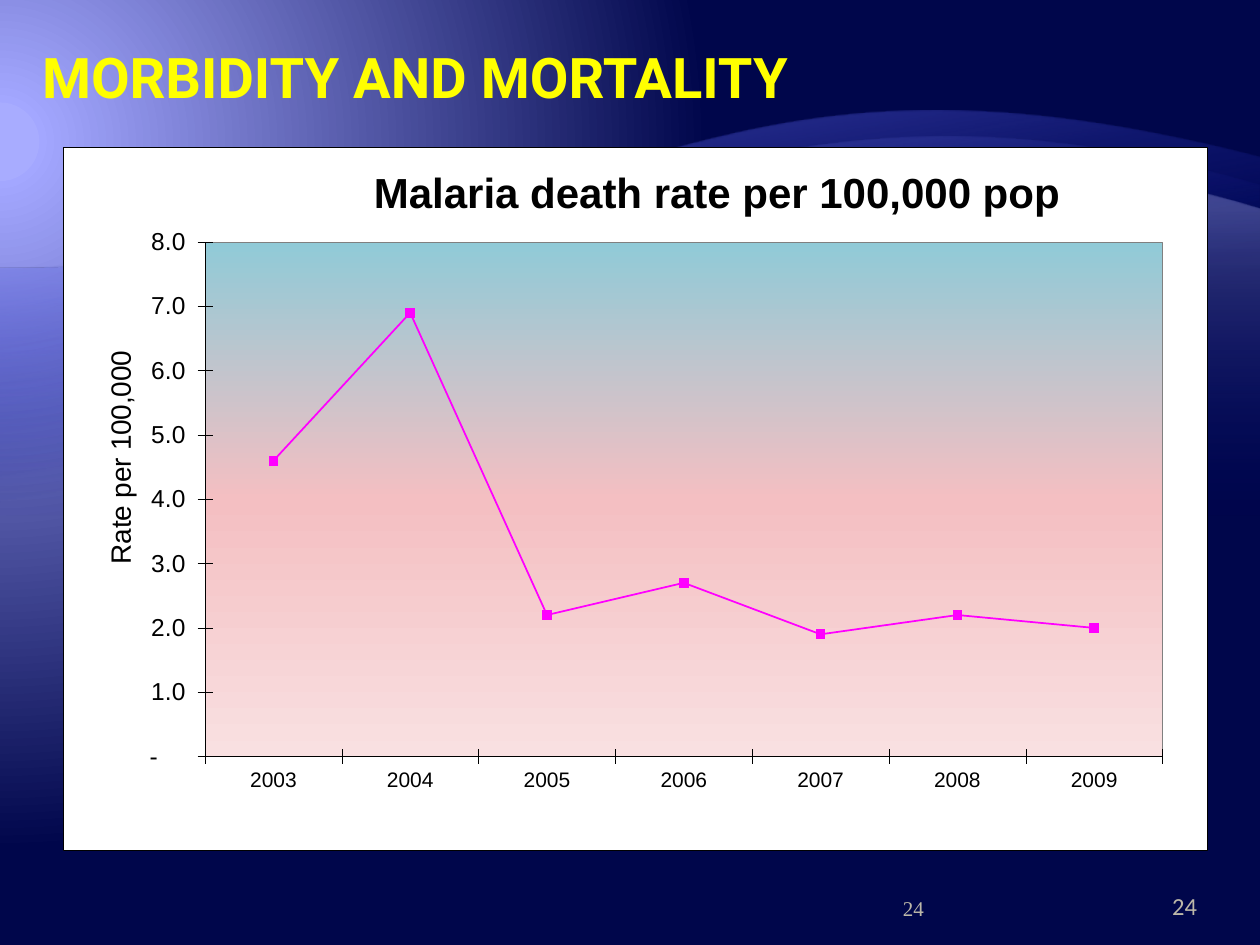
"""Build the malaria mortality slide with its line chart."""
from dataclasses import dataclass
from typing import Optional

from lxml.etree import SubElement
from pptx import Presentation
from pptx.chart.data import CategoryChartData
from pptx.dml.color import RGBColor
from pptx.enum.chart import XL_CHART_TYPE, XL_MARKER_STYLE, XL_TICK_MARK
from pptx.enum.text import MSO_ANCHOR, MSO_AUTO_SIZE, PP_ALIGN
from pptx.oxml import parse_xml
from pptx.oxml.ns import nsdecls, qn
from pptx.util import Pt


@dataclass(frozen=True)
class Theme:
    title: str = "FFFF00"
    number: str = "BDB8A9"
    ink: str = "000000"
    panel: str = "FFFFFF"
    plot_border: str = "808080"
    rate: str = "FF00FF"
    wave_end: str = "000D9E"
    title_size: int = 32
    chart_title_size: int = 24
    axis_title_size: int = 16
    value_size: int = 14
    year_size: int = 12


@dataclass(frozen=True)
class Stop:
    position: int
    color: str
    opacity: int = 100


@dataclass(frozen=True)
class Box:
    left: float
    top: float
    width: float
    height: float


@dataclass(frozen=True)
class Wave:
    right_control: tuple
    right_end: tuple
    bottom: float
    stops: tuple
    angle: int


@dataclass(frozen=True)
class PageNumber:
    box: Box
    font: str
    size: int
    align: PP_ALIGN
    insets: tuple


THEME = Theme()
WAVE_START, LEFT_CONTROL = (0, 153.4), (360, 153.4)
UNITS_PER_POINT = 100
WAVES = (
    Wave((384.5, 3.6), (720, 90), 527.8,
         (Stop(65, THEME.wave_end, 0), Stop(100, "797FFF", 55)), 80),
    Wave((430.6, 22.3), (720, 105.8), 458.6,
         (Stop(65, THEME.wave_end, 0), Stop(100, "A3A7FF", 30)), 80),
    Wave((470.9, 43.9), (720, 119.5), 390.2,
         (Stop(35, THEME.wave_end, 0), Stop(100, "C1C4FF", 30)), 90),
)
BACKDROP = (Stop(5, "A8ACFF"), Stop(5, "A3A7FF"), Stop(90, "00064B"))
PLOT_STOPS = (Stop(0, "90CAD7"), Stop(50, "F4BFC2"), Stop(100, "F9E0E1"))
PAGE_NUMBERS = (
    PageNumber(Box(642, 500.8, 42, 28.8), "Calibri", 14, PP_ALIGN.RIGHT, (7.2, 0)),
    PageNumber(Box(516, 492, 168, 37.5), "Times New Roman", 12, PP_ALIGN.LEFT, (0, 7.2)),
)
DEATH_RATES = {"2003": 4.6, "2004": 6.9, "2005": 2.2, "2006": 2.7,
               "2007": 1.9, "2008": 2.2, "2009": 2.0}
RATE_FORMAT = r'_-* #,##0.0_-;\-* #,##0.0_-;_-* "-"??_-;_-@_-'


def gradient_xml(stops: tuple, direction: str) -> str:
    """Return a gradient fill as XML text."""
    marks = "".join(
        f'<a:gs pos="{stop.position * 1000}"><a:srgbClr val="{stop.color}">'
        f'<a:alpha val="{stop.opacity * 1000}"/></a:srgbClr></a:gs>' for stop in stops)
    return (f'<a:gradFill {nsdecls("a")} rotWithShape="1"><a:gsLst>{marks}</a:gsLst>'
            f'{direction}</a:gradFill>')


def linear(angle: int) -> str:
    """Return a linear gradient direction as XML text."""
    return f'<a:lin ang="{angle * 60000}" scaled="0"/>'


def swap_fill(properties, stops: tuple, direction: str) -> None:
    """Replace a solid fill by a gradient."""
    properties.replace(properties.find(qn("a:solidFill")),
                       parse_xml(gradient_xml(stops, direction)))


def write_text(frame, text: str, *, font: str, size: int, color: str, bold: bool = False,
               align: Optional[PP_ALIGN] = None) -> None:
    """Write one formatted paragraph into a text frame."""
    paragraph = frame.paragraphs[0]
    paragraph.alignment = align
    run = paragraph.add_run()
    run.text = text
    run.font.name, run.font.size, run.font.bold = font, Pt(size), bold
    run.font.color.rgb = RGBColor.from_string(color)


def place(shape, box: Box) -> None:
    """Move and size a shape."""
    shape.left, shape.top = Pt(box.left), Pt(box.top)
    shape.width, shape.height = Pt(box.width), Pt(box.height)


def paint_backdrop(slide) -> None:
    """Fill the slide background with a radial gradient."""
    slide.background.fill.solid()
    swap_fill(slide.element.find(".//" + qn("p:bgPr")), BACKDROP,
              '<a:path path="circle"><a:fillToRect l="20000" t="30000" r="135000" b="100000"/></a:path>')


def draw_wave(slide, wave: Wave) -> None:
    """Draw one translucent wave, turned half round, below a cubic curve."""
    top = wave.right_end[1]

    def turned(point: tuple) -> tuple:
        """Return a point turned half round the wave's middle, in path units."""
        return (round((720 - point[0]) * UNITS_PER_POINT),
                round((top + wave.bottom - point[1]) * UNITS_PER_POINT))

    builder = slide.shapes.build_freeform(*turned(WAVE_START), scale=Pt(1) / UNITS_PER_POINT)
    corners = (wave.right_end, (720, wave.bottom), (0, wave.bottom))
    builder.add_line_segments([turned(corner) for corner in corners], close=True)
    band = builder.convert_to_shape()
    crest = band.element.spPr.find(".//" + qn("a:lnTo"))
    curve = parse_xml(f'<a:cubicBezTo {nsdecls("a")}/>')
    for point in (LEFT_CONTROL, wave.right_control, wave.right_end):
        x, y = turned(point)
        SubElement(curve, qn("a:pt"), x=str(x), y=str(y - round(top * UNITS_PER_POINT)))
    crest.getparent().replace(crest, curve)
    band.rotation = 180
    band.shadow.inherit = False
    band.line.fill.background()
    band.fill.solid()
    swap_fill(band.element.spPr, wave.stops, linear(wave.angle))


def draw_heading(slide) -> None:
    """Place the slide title above the waves."""
    heading = slide.shapes.title
    slide.shapes.element.append(heading.element)
    place(heading, Box(24, 24, 672, 95))
    frame = heading.text_frame
    frame.margin_left = frame.margin_right = frame.margin_top = frame.margin_bottom = 0
    frame.vertical_anchor = MSO_ANCHOR.TOP
    frame.auto_size = MSO_AUTO_SIZE.NONE
    write_text(frame, "MORBIDITY AND MORTALITY", font="Roboto", size=THEME.title_size,
               color=THEME.title, bold=True, align=PP_ALIGN.LEFT)


def draw_page_number(slide, number: PageNumber) -> None:
    """Draw one page number."""
    label = slide.shapes.add_textbox(0, 0, 0, 0)
    place(label, number.box)
    frame = label.text_frame
    frame.word_wrap = True
    frame.vertical_anchor = MSO_ANCHOR.BOTTOM
    frame.margin_left, frame.margin_right = (Pt(inset) for inset in number.insets)
    write_text(frame, "24", font=number.font, size=number.size, color=THEME.number, align=number.align)


def set_layout(part, **values) -> None:
    """Give a chart part a manual layout in fractions of the chart."""
    for old in part.findall(qn("c:layout")):
        part.remove(old)
    layout = parse_xml(f'<c:layout {nsdecls("c")}><c:manualLayout/></c:layout>')
    settings = {"xMode": "edge", "yMode": "edge", **values}
    if "w" in values:
        settings = {"layoutTarget": "inner", **settings}
    for tag, value in settings.items():
        SubElement(layout[0], qn("c:" + tag)).set("val", str(value))
    part.insert(0 if part.find(qn("c:tx")) is None else 1, layout)


def area_format(fill: str, border: str):
    """Return fill and border properties for a chart area."""
    return parse_xml(f'<c:spPr {nsdecls("c", "a")}>{fill}<a:ln w="{Pt(0.25)}"><a:solidFill>'
                     f'<a:srgbClr val="{border}"/></a:solidFill></a:ln></c:spPr>')


def style_axis(axis, size: int) -> None:
    """Format an axis with crossing ticks and no gridlines."""
    axis.has_major_gridlines = False
    axis.major_tick_mark, axis.minor_tick_mark = XL_TICK_MARK.CROSS, XL_TICK_MARK.NONE
    axis.format.line.color.rgb = RGBColor.from_string(THEME.ink)
    axis.format.line.width = Pt(0.25)
    font = axis.tick_labels.font
    font.name, font.size = "Arial", Pt(size)
    font.color.rgb = RGBColor.from_string(THEME.ink)


def draw_death_rates(slide) -> None:
    """Draw the line chart of malaria death rates."""
    data = CategoryChartData()
    data.categories = list(DEATH_RATES)
    data.add_series("Series 1", list(DEATH_RATES.values()))
    chart = slide.shapes.add_chart(XL_CHART_TYPE.LINE_MARKERS, Pt(36), Pt(84), Pt(654), Pt(402), data).chart
    chart.has_legend = False
    chart.font.name, chart.font.size = "Arial", Pt(7)
    write_text(chart.chart_title.text_frame, "Malaria death rate per 100,000 pop", font="Arial",
               size=THEME.chart_title_size, color=THEME.ink, bold=True)
    set_layout(chart.chart_title.element, x=0.265, y=0.015)
    years, rates = chart.category_axis, chart.value_axis
    style_axis(years, THEME.year_size)
    style_axis(rates, THEME.value_size)
    rates.minimum_scale, rates.maximum_scale, rates.major_unit = 0, 8, 1
    rates.tick_labels.number_format = RATE_FORMAT
    rates.tick_labels.number_format_is_linked = False
    write_text(rates.axis_title.text_frame, "Rate per 100,000", font="Arial",
               size=THEME.axis_title_size, color=THEME.ink)
    set_layout(rates.axis_title.element, x=0.03, y=0.283)
    chart.plots[0].vary_by_categories = False
    series = chart.plots[0].series[0]
    series.smooth = False
    rate_color = RGBColor.from_string(THEME.rate)
    series.format.line.color.rgb, series.format.line.width = rate_color, Pt(1)
    series.marker.style, series.marker.size = XL_MARKER_STYLE.SQUARE, 5
    series.marker.format.fill.solid()
    series.marker.format.fill.fore_color.rgb = rate_color
    series.marker.format.line.color.rgb = rate_color
    plot_area = chart.element.find(".//" + qn("c:plotArea"))
    set_layout(plot_area, x=0.124, y=0.135, w=0.837, h=0.732)
    plot_area.append(area_format(gradient_xml(PLOT_STOPS, linear(90)), THEME.plot_border))
    panel = f'<a:solidFill><a:srgbClr val="{THEME.panel}"/></a:solidFill>'
    chart.element.find(qn("c:chart")).addnext(area_format(panel, THEME.ink))


def main() -> None:
    """Build and save the slide."""
    deck = Presentation()
    deck.slide_width, deck.slide_height = Pt(720), Pt(540)
    slide = deck.slides.add_slide(deck.slide_layouts[5])
    paint_backdrop(slide)
    for wave in WAVES:
        draw_wave(slide, wave)
    for number in PAGE_NUMBERS:
        draw_page_number(slide, number)
    draw_heading(slide)
    draw_death_rates(slide)
    deck.save("out.pptx")


if __name__ == "__main__":
    main()
